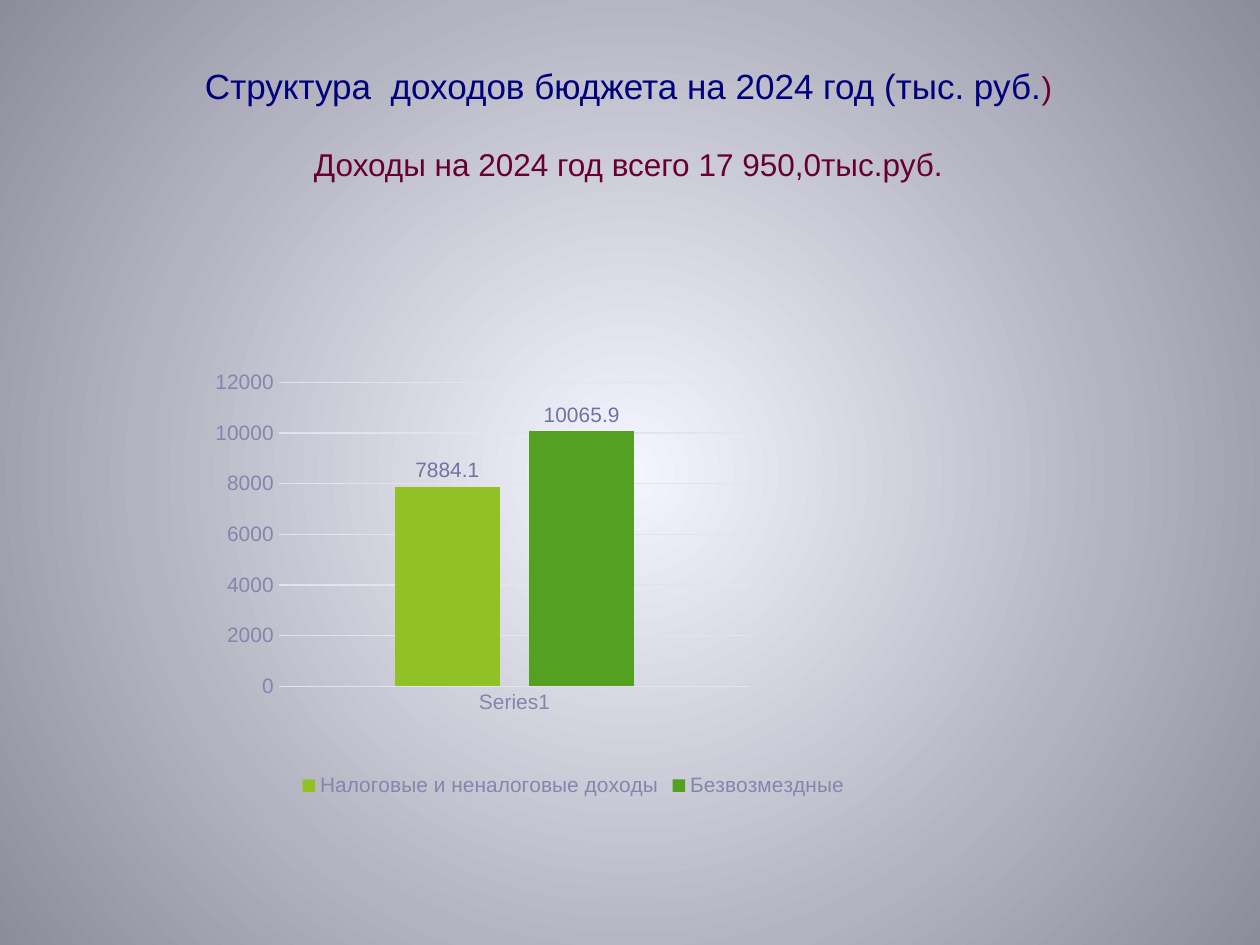
from lxml import etree
from pptx import Presentation
from pptx.chart.data import CategoryChartData
from pptx.dml.color import RGBColor
from pptx.enum.chart import (XL_CHART_TYPE, XL_LABEL_POSITION,
                             XL_LEGEND_POSITION, XL_TICK_MARK)
from pptx.enum.text import MSO_ANCHOR, PP_ALIGN
from pptx.oxml import parse_xml
from pptx.oxml.ns import nsdecls, qn
from pptx.util import Emu, Pt

SCALE = 914400 / 126
FONT = "Arial"
MUTED = "8585AE"
GRID = "E3E3EC"
SERIES = [("Налоговые и неналоговые доходы", 7884.1, "90C226"),
          ("Безвозмездные", 10065.9, "54A021")]


def px(n):
    return Emu(round(n * SCALE))


def rgb(code):
    return RGBColor.from_string(code)


def style(font, size, code):
    font.name = FONT
    font.size = Pt(size)
    font.bold = False
    font.color.rgb = rgb(code)


def paint_back(slide):
    """Radial gradient from a light centre to dark corners."""
    fill = slide.background.fill
    fill.gradient()
    for stop, code in zip(fill.gradient_stops, ("F5F5FF", "8C8C9B")):
        stop.color.rgb = rgb(code)
    grad = slide.background._cSld.find(".//" + qn("a:gradFill"))
    line = grad.find(qn("a:lin"))
    ring = parse_xml(
        f'<a:path {nsdecls("a")} path="circle">'
        '<a:fillToRect l="50000" t="50000" r="50000" b="50000"/></a:path>')
    grad.replace(line, ring)


def add_title(slide, x, y, w, h):
    title = slide.shapes.title
    title.left, title.top, title.width, title.height = map(px, (x, y, w, h))
    frame = title.text_frame
    frame.word_wrap = True
    frame.vertical_anchor = MSO_ANCHOR.MIDDLE
    para = frame.paragraphs[0]
    para.alignment = PP_ALIGN.CENTER
    # Heading, closing bracket, then the total two lines below
    runs = [("Структура  доходов бюджета на 2024 год (тыс. руб.", 20, "00007C", 0),
            (")", 18, "660033", 2),
            ("Доходы на 2024 год всего 17 950,0тыс.руб.", 18, "660033", 0)]
    for text, size, code, breaks in runs:
        run = para.add_run()
        run.text = text
        style(run.font, size, code)
        for _ in range(breaks):
            para.add_line_break()
            props = etree.SubElement(para._p[-1], qn("a:rPr"))
            props.set("sz", str(size * 100))


def set_layout(parent, x, y, w, h, inner=False):
    """Fix a chart part at fractions of the chart area."""
    target = '<c:layoutTarget val="inner"/>' if inner else ""
    parts = "".join(f'<c:{k} val="{v}"/>' for k, v in
                    (("xMode", "edge"), ("yMode", "edge"),
                     ("x", x), ("y", y), ("w", w), ("h", h)))
    node = parse_xml(f'<c:layout {nsdecls("c")}><c:manualLayout>'
                     f'{target}{parts}</c:manualLayout></c:layout>')
    for old in parent.findall(qn("c:layout")):
        parent.remove(old)
    after = parent.find(qn("c:legendPos"))
    parent.insert(0 if after is None else parent.index(after) + 1, node)


def add_bars(slide, x, y, w, h):
    data = CategoryChartData()
    data.categories = ["Series1"]
    for name, value, _ in SERIES:
        data.add_series(name, [value])
    chart = slide.shapes.add_chart(XL_CHART_TYPE.COLUMN_CLUSTERED,
                                   *map(px, (x, y, w, h)), data).chart
    chart.has_title = False
    style(chart.font, 10, "4F4F77")

    # Bars and their values
    plot = chart.plots[0]
    plot.gap_width = 219
    plot.overlap = -27
    plot.vary_by_categories = False
    for bar, (_, _, code) in zip(plot.series, SERIES):
        bar.format.fill.solid()
        bar.format.fill.fore_color.rgb = rgb(code)
        labels = bar.data_labels
        labels.show_value = True
        labels.position = XL_LABEL_POSITION.OUTSIDE_END
        style(labels.font, 11.9, "7272A2")

    # Axes and grid
    cat, val = chart.category_axis, chart.value_axis
    for axis in (cat, val):
        axis.major_tick_mark = axis.minor_tick_mark = XL_TICK_MARK.NONE
        style(axis.tick_labels.font, 11.9, MUTED)
    val.maximum_scale, val.minimum_scale, val.major_unit = 12000, 0, 2000
    val.format.line.fill.background()
    for part in (cat, val.major_gridlines):
        part.format.line.color.rgb = rgb(GRID)
        part.format.line.width = Pt(0.75)

    # Legend below the plot
    chart.has_legend = True
    key = chart.legend
    key.position = XL_LEGEND_POSITION.RIGHT
    key.include_in_layout = False
    style(key.font, 11.9, MUTED)
    set_layout(key._element, 0.11, 0.84, 0.66, 0.07)
    set_layout(chart._chartSpace.chart.plotArea, 0.09, 0.04, 0.56, 0.63, True)


def main():
    deck = Presentation()
    deck.slide_width, deck.slide_height = px(1260), px(945)
    slide = deck.slides.add_slide(deck.slide_layouts[5])
    paint_back(slide)
    add_title(slide, 42, 32, 1173, 183)
    add_bars(slide, 203, 363, 842, 483)
    deck.save("out.pptx")


if __name__ == "__main__":
    main()
